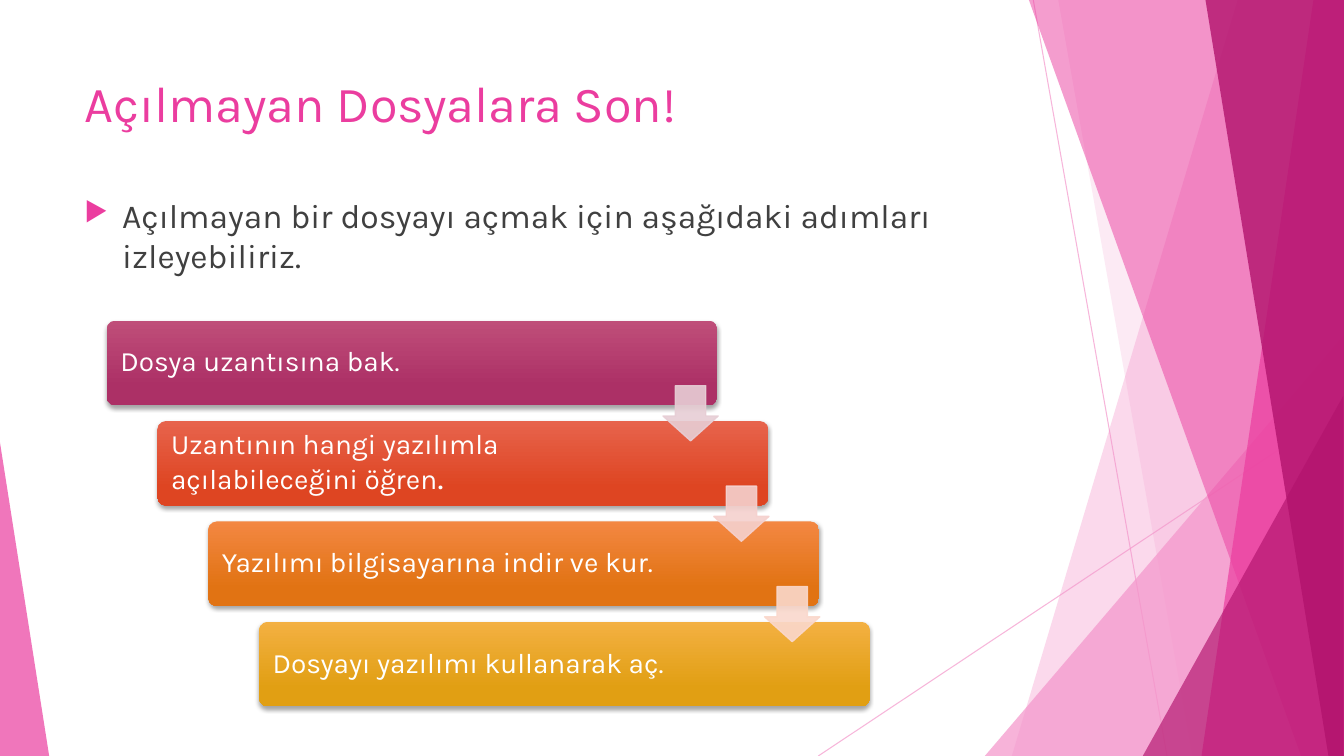
from lxml.etree import SubElement
from pptx import Presentation
from pptx.dml.color import RGBColor
from pptx.enum.shapes import MSO_CONNECTOR, MSO_SHAPE
from pptx.enum.text import MSO_ANCHOR
from pptx.oxml.ns import qn
from pptx.util import Cm, Pt

TITLE = "Açılmayan Dosyalara Son!"
INTRO = "Açılmayan bir dosyayı açmak için aşağıdaki adımları izleyebiliriz."
STEPS = [
    [("Dosya uzantısına bak.", 20)],
    [("Uzantının hangi yazılımla açılabileceğini öğren", 20), (".", 24)],
    [("Yazılımı bilgisayarına indir ve kur.", 20)],
    [("Dosyayı yazılımı kullanarak aç.", 20)],
]
COLORS = {
    "pale": "F496CB", "pink": "EB3D9F", "deep": "B2136D",
    "body": "404040", "white": "FFFFFF", "shadow": "000000",
}
BAR_COLORS = [("BF4E79", "AC3066"), ("E7634C", "DE4522"),
              ("F38742", "E17313"), ("F3B042", "E19F13")]
ARROW_COLORS = ["E7CED5", "F5D1CE", "FAD8CC"]

WIDTH, HEIGHT = 33.87, 19.05
RAYS = [(26.04, 0, 29.41, HEIGHT), (WIDTH, 10.24, 20.62, HEIGHT)]
BANDS = [
    (31.19, 25.5, "pale", 36),
    (26.67, 30.05, "pale", 20),
    (25.93, 32.79, "pink", 50),
    (33.1, 30.28, "pink", 70),
    (30.38, 33.48, "deep", 80),
]
PALE_CORNER = (24.82, 8.46, 9.04, 10.59, 1, "pale", 72)
DEEP_CORNER = (28.8, 9.98, 5.05, 9.07, 1, "deep", 66)
LEFT_CORNER = (0, 11.15, 1.24, 7.9, 0, "pink", 70)

BAR_LEFT, BAR_TOP, BAR_WIDTH, BAR_HEIGHT = 2.69, 8.08, 15.39, 2.13
STEP_X, STEP_Y = 1.28, 2.53
ARROW_X, ARROW_Y, ARROW_SIZE = 14.02, 1.64, 1.39

TEXT_FRAME = {"word_wrap": True, "vertical_anchor": MSO_ANCHOR.TOP}
BAR_FRAME = {
    "word_wrap": True, "vertical_anchor": MSO_ANCHOR.MIDDLE,
    "margin_left": Cm(0.28), "margin_right": Cm(2.92),
    "margin_top": Cm(0.2), "margin_bottom": Cm(0.2),
}


def apply(target, values):
    for name, value in values.items():
        setattr(target, name, value)


def rgb(value):
    return RGBColor.from_string(value)


def set_alpha(shape, percent):
    for color in shape.element.spPr.iter(qn("a:srgbClr")):
        SubElement(color, qn("a:alpha"), val=str(percent * 1000))


def paint(shape, color, percent):
    shape.shadow.inherit = False
    shape.fill.solid()
    shape.fill.fore_color.rgb = rgb(color)
    shape.line.fill.background()
    set_alpha(shape, percent)


def write(paragraph, runs, color):
    for text, size in runs:
        span = paragraph.add_run()
        span.text = text
        apply(span.font, {"name": "Karla", "size": Pt(size)})
        span.font.color.rgb = rgb(color)


def add_text(page, top, height, text, size, color):
    box = page.shapes.add_textbox(Cm(1.88), Cm(top), Cm(23.88), Cm(height))
    apply(box.text_frame, TEXT_FRAME)
    para = box.text_frame.paragraphs[0]
    write(para, [(text, size)], color)
    return para


def add_bullet(para):
    properties = para._p.get_or_add_pPr()
    properties.set("marL", str(Cm(0.95)))
    properties.set("indent", str(-Cm(0.95)))
    bullet_color = SubElement(properties, qn("a:buClr"))
    SubElement(bullet_color, qn("a:srgbClr"), val=COLORS["pink"])
    SubElement(properties, qn("a:buSzPct"), val="80000")
    SubElement(properties, qn("a:buChar"), char="▶")


def add_ray(page, ray):
    line = page.shapes.add_connector(MSO_CONNECTOR.STRAIGHT, *map(Cm, ray))
    line.line.width = Pt(0.75)
    line.line.color.rgb = rgb(COLORS["pale"])
    set_alpha(line, 70)
    SubElement(line.element.spPr, qn("a:effectLst"))


def add_band(page, top_x, bottom_x, color, percent):
    builder = page.shapes.build_freeform(Cm(top_x), Cm(0))
    corners = [(WIDTH, 0), (WIDTH, HEIGHT), (bottom_x, HEIGHT)]
    builder.add_line_segments([(Cm(x), Cm(y)) for x, y in corners], close=True)
    paint(builder.convert_to_shape(), COLORS[color], percent)


def add_corner(page, left, top, width, height, apex, color, percent):
    corner = page.shapes.add_shape(
        MSO_SHAPE.ISOSCELES_TRIANGLE, Cm(left), Cm(top), Cm(width), Cm(height))
    corner.adjustments[0] = apex
    paint(corner, COLORS[color], percent)


def add_bar(page, index, runs, gradient):
    bar = page.shapes.add_shape(
        MSO_SHAPE.ROUNDED_RECTANGLE,
        Cm(BAR_LEFT + index * STEP_X), Cm(BAR_TOP + index * STEP_Y),
        Cm(BAR_WIDTH), Cm(BAR_HEIGHT))
    bar.adjustments[0] = 0.1
    bar.shadow.inherit = False
    bar.fill.gradient()
    bar.fill.gradient_angle = 270
    for stop, color, position in zip(bar.fill.gradient_stops, gradient, (0, 0.78)):
        stop.color.rgb = rgb(color)
        stop.position = position
    bar.line.fill.background()
    effects = bar.element.spPr.find(qn("a:effectLst"))
    shadow = SubElement(effects, qn("a:outerShdw"), blurRad=str(Pt(3)),
                        dist=str(Pt(2)), dir="5400000", rotWithShape="0")
    shade = SubElement(shadow, qn("a:srgbClr"), val=COLORS["shadow"])
    SubElement(shade, qn("a:alpha"), val="35000")
    apply(bar.text_frame, BAR_FRAME)
    para = bar.text_frame.paragraphs[0]
    apply(para, {"line_spacing": 0.9, "alignment": 1})
    write(para, runs, COLORS["white"])


def add_arrow(page, index, color):
    arrow = page.shapes.add_shape(
        MSO_SHAPE.DOWN_ARROW,
        Cm(BAR_LEFT + ARROW_X + index * STEP_X),
        Cm(BAR_TOP + ARROW_Y + index * STEP_Y),
        Cm(ARROW_SIZE), Cm(ARROW_SIZE))
    arrow.adjustments[0] = 0.55
    arrow.adjustments[1] = 0.45
    arrow.line.color.rgb = rgb(color)
    arrow.line.width = Pt(1)
    arrow.shadow.inherit = False
    arrow.fill.solid()
    arrow.fill.fore_color.rgb = rgb(color)
    set_alpha(arrow, 90)


def main():
    deck = Presentation()
    apply(deck, {"slide_width": Cm(WIDTH), "slide_height": Cm(HEIGHT)})
    page = deck.slides.add_slide(deck.slide_layouts[6])
    for ray in RAYS:
        add_ray(page, ray)
    for band in BANDS[:2]:
        add_band(page, *band)
    add_corner(page, *PALE_CORNER)
    for band in BANDS[2:]:
        add_band(page, *band)
    for corner in (DEEP_CORNER, LEFT_CORNER):
        add_corner(page, *corner)
    add_text(page, 1.7, 3.66, TITLE, 36, COLORS["pink"])
    add_bullet(add_text(page, 4.78, 2.67, INTRO, 24, COLORS["body"]))
    for index, (runs, gradient) in enumerate(zip(STEPS, BAR_COLORS)):
        add_bar(page, index, runs, gradient)
    for index, color in enumerate(ARROW_COLORS):
        add_arrow(page, index, color)
    deck.save("out.pptx")


if __name__ == "__main__":
    main()
